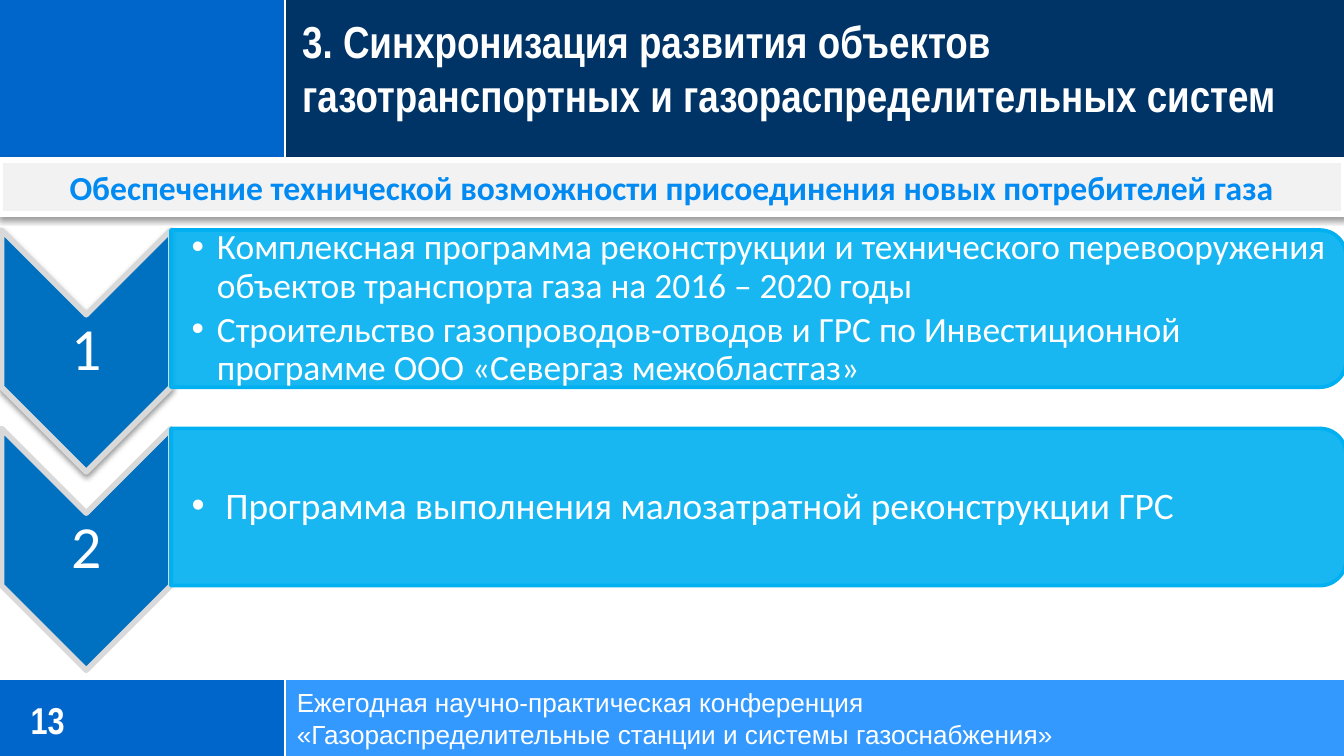
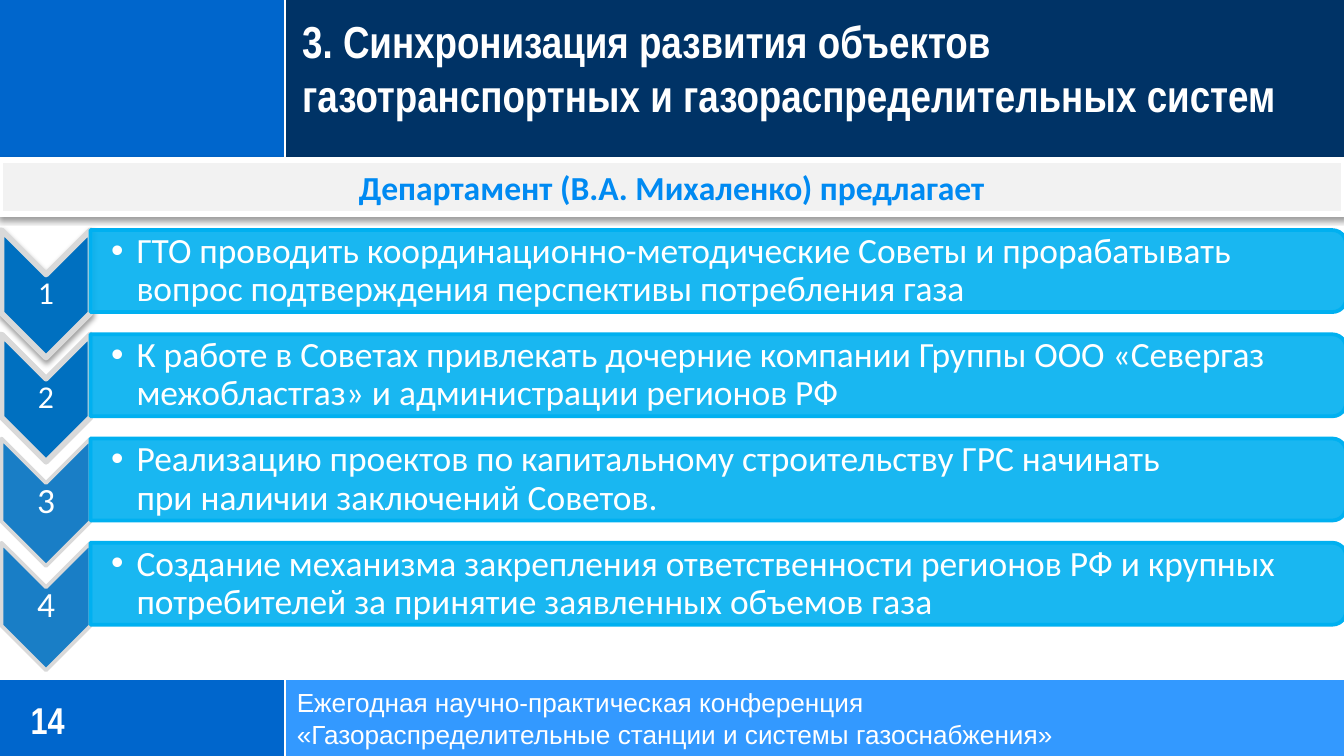
from dataclasses import dataclass
from typing import Any, NamedTuple

from lxml import etree
from pptx import Presentation
from pptx.dml.color import RGBColor
from pptx.enum.shapes import MSO_CONNECTOR, MSO_SHAPE
from pptx.enum.text import MSO_ANCHOR, MSO_AUTO_SIZE, PP_ALIGN
from pptx.oxml.ns import qn
from pptx.util import Cm, Pt

RECT = MSO_SHAPE.RECTANGLE
CHEVRON = MSO_SHAPE.CHEVRON
ROUND_TOP = MSO_SHAPE.ROUND_2_SAME_RECTANGLE
STRAIGHT = MSO_CONNECTOR.STRAIGHT
TOP, MIDDLE = MSO_ANCHOR.TOP, MSO_ANCHOR.MIDDLE
LEFT, CENTER = PP_ALIGN.LEFT, PP_ALIGN.CENTER
NO_FIT = MSO_AUTO_SIZE.NONE


@dataclass(frozen=True)
class Theme:
    white: str = "FFFFFF"
    navy: str = "003366"
    blue: str = "0066CC"
    sky: str = "3399FF"
    chevron: str = "0070C0"
    chevron_edge: str = "D9D9D9"
    bar: str = "00B0F0"
    banner: str = "F2F2F2"
    banner_text: str = "008AF2"
    shadow: str = "000000"
    head_font: str = "Arial Narrow"
    foot_font: str = "Arial"
    body_font: str = "Calibri"
    title_size: int = 24
    page_size: int = 20
    foot_size: int = 14
    banner_size: int = 18
    body_size: int = 19
    body_large: int = 20
    label_large: int = 32
    label_small: int = 17
    label_medium: int = 19


T = Theme()
WIDTH, HEIGHT = 25.4, 14.29
SPLIT = 5.38
HEAD_H = 3.0
FOOT_Y = 12.85
LIST_X, LIST_Y = 0.03, 4.35
LIST_RIGHT = 25.44
FIRST_PAGE = 13
TITLE = "3. Синхронизация развития объектов газотранспортных и газораспределительных систем"
FOOTER = ["Ежегодная научно-практическая конференция",
          "«Газораспределительные станции и системы газоснабжения»"]


class Box(NamedTuple):
    x: float
    y: float
    w: float
    h: float


class Band(NamedTuple):
    box: Box
    fill: str


class Rule(NamedTuple):
    x1: float
    y1: float
    x2: float
    y2: float


class Step(NamedTuple):
    items: list[str]
    label_size: int
    size: int = T.body_size
    indent: float = 0.48
    strong: bool = True


class Grid(NamedTuple):
    chevron_w: float
    chevron_h: float
    bar_h: float
    pitch: float
    inset: float


class Page(NamedTuple):
    layout: int
    banner: str
    grid: Grid
    steps: list[Step]


BANDS = [
    Band(Box(0, FOOT_Y, SPLIT, HEIGHT - FOOT_Y), T.blue),
    Band(Box(SPLIT, FOOT_Y, WIDTH - SPLIT, HEIGHT - FOOT_Y), T.sky),
    Band(Box(SPLIT, 0, WIDTH - SPLIT, HEAD_H), T.navy),
    Band(Box(0, 0, SPLIT, HEAD_H), T.blue),
]
RULES = [
    Rule(SPLIT, FOOT_Y, SPLIT, HEIGHT),
    Rule(SPLIT, 0, SPLIT, HEAD_H),
    Rule(0, FOOT_Y - 0.02, WIDTH, FOOT_Y - 0.02),
    Rule(0, HEAD_H, WIDTH, HEAD_H),
]
PAGES = [
    Page(3, "Обеспечение технической возможности присоединения новых потребителей газа",
         Grid(3.2, 4.57, 2.97, 3.75, 0.15), [
             Step(["Комплексная программа реконструкции и технического перевооружения "
                   "объектов транспорта газа на 2016 – 2020 годы",
                   "Строительство газопроводов-отводов и ГРС по Инвестиционной "
                   "программе ООО «Севергаз межобластгаз»"], T.label_large),
             Step(["Программа выполнения малозатратной реконструкции ГРС"],
                  T.label_large, T.body_large, 0.64),
         ]),
    Page(4, "Департамент (В.А. Михаленко) предлагает",
         Grid(1.68, 2.41, 1.55, 1.97, 0.08), [
             Step(["ГТО проводить координационно-методические Советы и прорабатывать "
                   "вопрос подтверждения перспективы потребления газа"], T.label_small),
             Step(["К работе в Советах привлекать дочерние компании Группы ООО «Севергаз "
                   "межобластгаз» и администрации регионов РФ"], T.label_small),
             Step(["Реализацию проектов по капитальному строительству ГРС начинать\v"
                   "при наличии заключений Советов."], T.label_medium, strong=False),
             Step(["Создание механизма закрепления ответственности регионов РФ и крупных "
                   "потребителей за принятие заявленных объемов газа"],
                  T.label_medium, strong=False),
         ]),
]


def write(sp: Any, lines: list[str], *, size: int, font: str = T.body_font,
          color: str = T.white, bold: bool = False, align: Any = LEFT,
          anchor: Any = TOP, insets: tuple[float, ...] = (0.25, 0.13, 0.25, 0.13),
          spacing: float = 1.0, after: float = 0, indent: float = 0) -> None:
    tf = sp.text_frame
    tf.word_wrap = True
    tf.auto_size = NO_FIT
    tf.vertical_anchor = anchor
    tf.margin_left, tf.margin_top, tf.margin_right, tf.margin_bottom = map(Cm, insets)
    for i, line in enumerate(lines):
        p = tf.add_paragraph() if i else tf.paragraphs[0]
        p.alignment = align
        p.line_spacing = spacing
        p.space_before = Pt(0)
        p.space_after = Pt(after)
        if indent:
            add_bullet(p, indent)
        for j, part in enumerate(line.split("\v")):
            if j:
                p.add_line_break()
            r = p.add_run()
            r.text = part
            r.font.name = font
            r.font.size = Pt(size)
            r.font.bold = bold
            r.font.color.rgb = RGBColor.from_string(color)


def add_bullet(p: Any, indent: float) -> None:
    p.level = 1
    pPr = p._p.get_or_add_pPr()
    pPr.set("marL", str(Cm(indent)))
    pPr.set("indent", str(-Cm(indent)))
    etree.SubElement(pPr, qn("a:buFont"), typeface="Arial")
    etree.SubElement(pPr, qn("a:buChar"), char="•")


def place(sp: Any, box: Box) -> None:
    sp.left, sp.top, sp.width, sp.height = map(Cm, box)


def bring_forward(sp: Any) -> None:
    sp.element.getparent().append(sp.element)


def add_shape(slide: Any, kind: Any, box: Box, fill: str, *, line: str = "",
              width: float = 0, alpha: int = 100, shadow: bool = False,
              turned: bool = False) -> Any:
    if turned:
        shift = (box.w - box.h) / 2
        box = Box(box.x + shift, box.y - shift, box.h, box.w)
    sp = slide.shapes.add_shape(kind, *map(Cm, box))
    sp.rotation = 90 if turned else 0
    sp.shadow.inherit = False
    sp.fill.solid()
    sp.fill.fore_color.rgb = RGBColor.from_string(fill)
    if alpha < 100:
        clr = sp.element.spPr.find(f"{qn('a:solidFill')}/{qn('a:srgbClr')}")
        etree.SubElement(clr, qn("a:alpha"), val=str(alpha * 1000))
    if line:
        sp.line.color.rgb = RGBColor.from_string(line)
        sp.line.width = Pt(width)
    else:
        sp.line.fill.background()
    if shadow:
        effects = sp.element.spPr.find(qn("a:effectLst"))
        outer = etree.SubElement(effects, qn("a:outerShdw"), blurRad=str(Pt(3.1)),
                                 dist=str(Pt(1.6)), dir="5400000", rotWithShape="0")
        clr = etree.SubElement(outer, qn("a:srgbClr"), val=T.shadow)
        etree.SubElement(clr, qn("a:alpha"), val="38000")
    return sp


def add_text(slide: Any, box: Box, lines: list[str], **style: Any) -> None:
    write(slide.shapes.add_textbox(*map(Cm, box)), lines, **style)


def add_rule(slide: Any, rule: Rule) -> None:
    cn = slide.shapes.add_connector(STRAIGHT, *map(Cm, rule))
    cn.line.color.rgb = RGBColor.from_string(T.white)
    cn.line.width = Pt(1.25)
    etree.SubElement(cn.element.spPr, qn("a:effectLst"))


def add_frame(slide: Any, number: int) -> None:
    for band in BANDS:
        add_shape(slide, RECT, band.box, band.fill)
    for rule in RULES:
        add_rule(slide, rule)
    add_text(slide, Box(0.58, 12.95, 4.11, 1.32), [str(number)], size=T.page_size,
             font=T.head_font, bold=True, anchor=MIDDLE, insets=(0, 0, 0, 0))
    title = slide.shapes.title
    place(title, Box(5.46, 0.13, 19.94, 2.31))
    write(title, [TITLE], size=T.title_size, font=T.head_font, bold=True)
    bring_forward(title)
    add_text(slide, Box(5.36, FOOT_Y, 20, 1.44), FOOTER, size=T.foot_size, font=T.foot_font)


def add_step(slide: Any, body: Any, step: Step, grid: Grid, index: int) -> None:
    y = LIST_Y + index * grid.pitch
    w, h = grid.chevron_w, grid.chevron_h
    add_shape(slide, CHEVRON, Box(LIST_X, y, w, h), T.chevron, line=T.chevron_edge,
              width=3 if step.strong else 2, alpha=100 if step.strong else 90,
              shadow=index == 0, turned=True)
    add_text(slide, Box(LIST_X, y + w / 2, w, h - w), [str(index + 1)],
             size=step.label_size, align=CENTER, anchor=MIDDLE, insets=(0.04,) * 4,
             spacing=0.9)
    x = LIST_X + w
    bar = Box(x, y, LIST_RIGHT - x, grid.bar_h)
    add_shape(slide, ROUND_TOP, bar, T.bar, line=T.bar, width=2, alpha=90, turned=True)
    place(body, Box(x, y + grid.inset, bar.w - grid.inset, bar.h - 2 * grid.inset))
    write(body, step.items, size=step.size, anchor=MIDDLE, insets=(0.39, 0.03, 0.03, 0.03),
          spacing=0.9, after=3, indent=step.indent)
    bring_forward(body)


def add_banner(slide: Any, text: str) -> None:
    sp = add_shape(slide, RECT, Box(0, 3.03, WIDTH, 1.02), T.banner, line=T.white,
                   width=3, shadow=True)
    write(sp, [text], size=T.banner_size, color=T.banner_text, bold=True,
          align=CENTER, anchor=MIDDLE)


def main() -> None:
    prs = Presentation()
    prs.slide_width, prs.slide_height = Cm(WIDTH), Cm(HEIGHT)
    for number, page in enumerate(PAGES, FIRST_PAGE):
        slide = prs.slides.add_slide(prs.slide_layouts[page.layout])
        bodies = list(slide.placeholders)[1:]
        add_frame(slide, number)
        for i, (body, step) in enumerate(zip(bodies, page.steps)):
            add_step(slide, body, step, page.grid, i)
        add_banner(slide, page.banner)
    prs.save("out.pptx")


if __name__ == "__main__":
    main()
